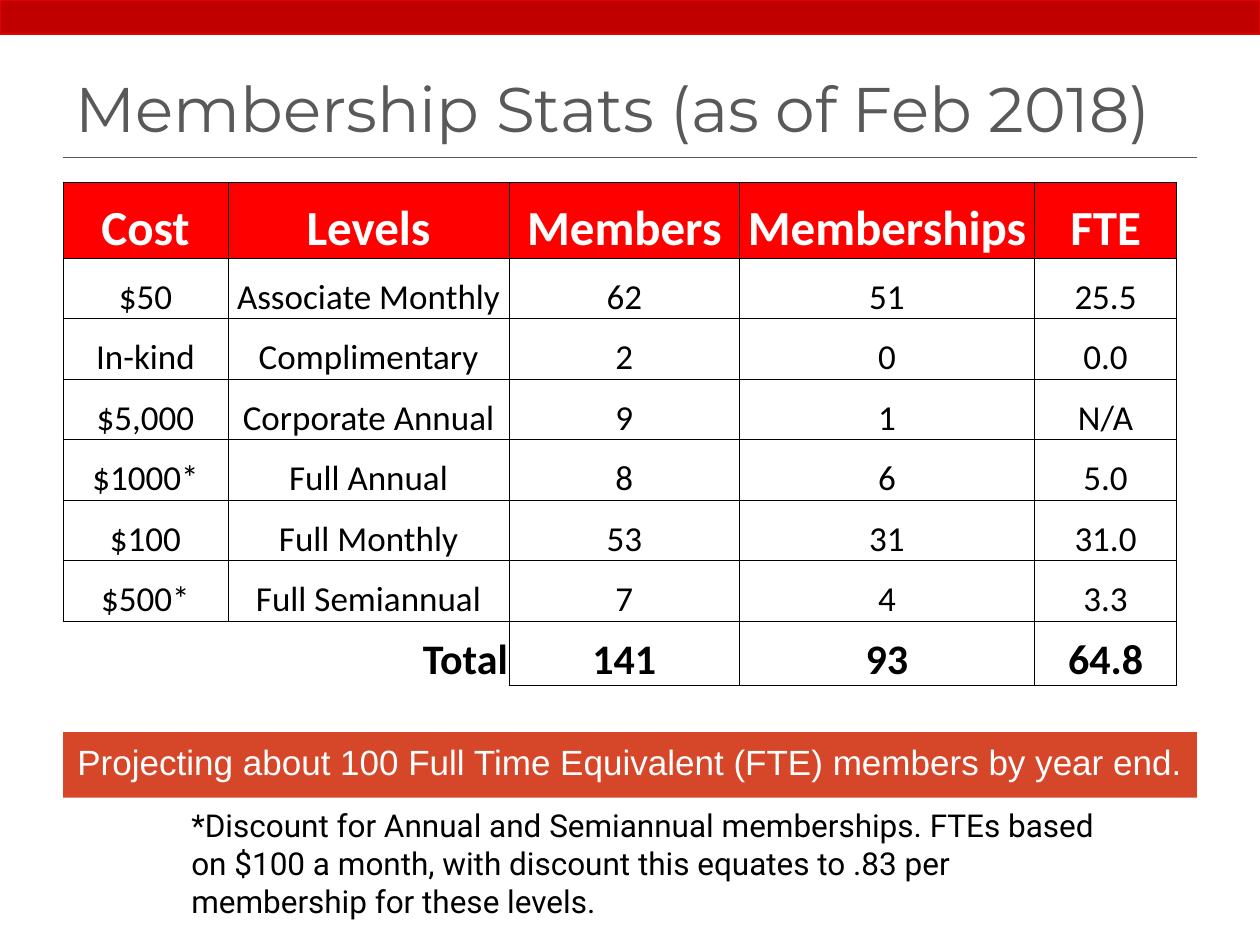
from lxml import etree
from pptx import Presentation
from pptx.dml.color import RGBColor
from pptx.enum.shapes import MSO_CONNECTOR, MSO_SHAPE
from pptx.enum.text import MSO_ANCHOR, MSO_AUTO_SIZE, PP_ALIGN
from pptx.oxml.ns import qn
from pptx.util import Inches, Pt

LEFT, CENTER, RIGHT = PP_ALIGN.LEFT, PP_ALIGN.CENTER, PP_ALIGN.RIGHT
TOP, BOTTOM = MSO_ANCHOR.TOP, MSO_ANCHOR.BOTTOM

TITLE = "Membership Stats (as of Feb 2018)"
PROJECTION = "Projecting about 100 Full Time Equivalent (FTE) members by year end."
FOOTNOTE = (
    "*Discount for Annual and Semiannual memberships. FTEs based on $100 a month, "
    "with discount this equates to .83 per membership for these levels."
)
ROWS = [
    ("Cost", "Levels", "Members", "Memberships", "FTE"),
    ("$50", "Associate Monthly", "62", "51", "25.5"),
    ("In-kind", "Complimentary", "2", "0", "0.0"),
    ("$5,000", "Corporate Annual", "9", "1", "N/A"),
    ("$1000*", "Full Annual", "8", "6", "5.0"),
    ("$100", "Full Monthly", "53", "31", "31.0"),
    ("$500*", "Full Semiannual", "7", "4", "3.3"),
    ("", "Total", "141", "93", "64.8"),
]
COLUMN_WIDTHS = [1.31, 2.23, 1.83, 2.34, 1.13]
HEADER_HEIGHT, ROW_HEIGHT, TOTAL_HEIGHT = 0.6, 0.48, 0.51
ROW_HEIGHTS = [HEADER_HEIGHT] + [ROW_HEIGHT] * (len(ROWS) - 2) + [TOTAL_HEIGHT]
BORDER_SIDES = ("L", "R", "T", "B")
TOTAL_SIDES = {0: "T", 1: "TR"}


def color(value):
    return RGBColor.from_string(value)


def place(shape, left, top, width, height):
    shape.left, shape.top = Inches(left), Inches(top)
    shape.width, shape.height = Inches(width), Inches(height)


def write(paragraph, text, size, font, ink, align=LEFT, bold=False):
    paragraph.alignment = align
    span = paragraph.add_run()
    span.text = text
    span.font.size, span.font.name, span.font.bold = Pt(size), font, bold
    span.font.color.rgb = color(ink)


def set_frame(frame, anchor, side, top, bottom):
    frame.word_wrap = True
    frame.auto_size = MSO_AUTO_SIZE.NONE
    frame.vertical_anchor = anchor
    frame.margin_left = frame.margin_right = Inches(side)
    frame.margin_top, frame.margin_bottom = Inches(top), Inches(bottom)


def set_borders(cell, visible):
    properties = cell._tc.get_or_add_tcPr()
    for index, side in enumerate(BORDER_SIDES):
        border = etree.Element(qn(f"a:ln{side}"), w=str(Pt(0.5)))
        if side in visible:
            fill = etree.SubElement(border, qn("a:solidFill"))
            etree.SubElement(fill, qn("a:srgbClr"), val="000000")
        else:
            etree.SubElement(border, qn("a:noFill"))
        properties.insert(index, border)


def add_banner(slide):
    banner = slide.shapes.add_shape(MSO_SHAPE.RECTANGLE, 0, 0, Inches(10), Inches(0.27))
    banner.shadow.inherit = False
    banner.fill.solid()
    banner.fill.fore_color.rgb = color("C00000")
    banner.line.color.rgb = color("E20000")
    banner.line.width = Pt(0.75)


def add_rule(slide):
    rule = slide.shapes.add_connector(
        MSO_CONNECTOR.STRAIGHT, Inches(0.5), Inches(1.25), Inches(9.5), Inches(1.25)
    )
    rule.line.color.rgb = color("595959")
    rule.line.width = Pt(0.75)
    etree.SubElement(rule._element.spPr, qn("a:effectLst"))


def fill_title(title):
    place(title, 0.5, 0.34, 9, 0.91)
    set_frame(title.text_frame, BOTTOM, 0.1, 0.1, 0.1)
    write(title.text_frame.paragraphs[0], TITLE, 36, "Montserrat", "595959")


def fill_projection(body):
    place(body, 0.5, 5.81, 9, 0.52)
    body.fill.solid()
    body.fill.fore_color.rgb = color("D6472A")
    set_frame(body.text_frame, TOP, 0.1, 0.07, 0.05)
    paragraph = body.text_frame.paragraphs[0]
    properties = paragraph._p.get_or_add_pPr()
    properties.set("marL", "0")
    properties.set("indent", "0")
    etree.SubElement(properties, qn("a:buNone"))
    paragraph.space_before = Pt(0)
    write(paragraph, PROJECTION, 20, "Arial", "FFFFFF", CENTER)


def add_footnote(slide):
    box = slide.shapes.add_textbox(Inches(1.42), Inches(6.35), Inches(7.47), Inches(1.01))
    set_frame(box.text_frame, TOP, 0.1, 0.05, 0.05)
    box.text_frame.auto_size = MSO_AUTO_SIZE.SHAPE_TO_FIT_TEXT
    write(box.text_frame.paragraphs[0], FOOTNOTE, 18, "Roboto", "000000")


def add_stats_table(slide):
    table = slide.shapes.add_table(
        len(ROWS), len(COLUMN_WIDTHS), Inches(0.5), Inches(1.45),
        Inches(sum(COLUMN_WIDTHS)), Inches(sum(ROW_HEIGHTS)),
    ).table
    table.first_row = table.horz_banding = False
    for column, width in zip(table.columns, COLUMN_WIDTHS):
        column.width = Inches(width)
    last = len(ROWS) - 1
    for r, values in enumerate(ROWS):
        table.rows[r].height = Inches(ROW_HEIGHTS[r])
        size = {0: 28, last: 24}.get(r, 20)
        for c, value in enumerate(values):
            cell = table.cell(r, c)
            cell.vertical_anchor = BOTTOM
            cell.margin_left = cell.margin_right = cell.margin_top = Inches(0.01)
            cell.margin_bottom = 0
            if r == 0:
                cell.fill.solid()
                cell.fill.fore_color.rgb = color("FF0000")
            else:
                cell.fill.background()
            set_borders(cell, TOTAL_SIDES.get(c, BORDER_SIDES) if r == last else BORDER_SIDES)
            if value:
                write(
                    cell.text_frame.paragraphs[0], value, size, "Calibri",
                    "FFFFFF" if r == 0 else "000000",
                    RIGHT if value == "Total" else CENTER, r in (0, last),
                )


def main():
    deck = Presentation()
    deck.slide_width, deck.slide_height = Inches(10), Inches(7.5)
    slide = deck.slides.add_slide(deck.slide_layouts[1])
    add_banner(slide)
    add_rule(slide)
    fill_title(slide.shapes.title)
    fill_projection(slide.placeholders[1])
    add_footnote(slide)
    add_stats_table(slide)
    deck.save("out.pptx")


if __name__ == "__main__":
    main()
